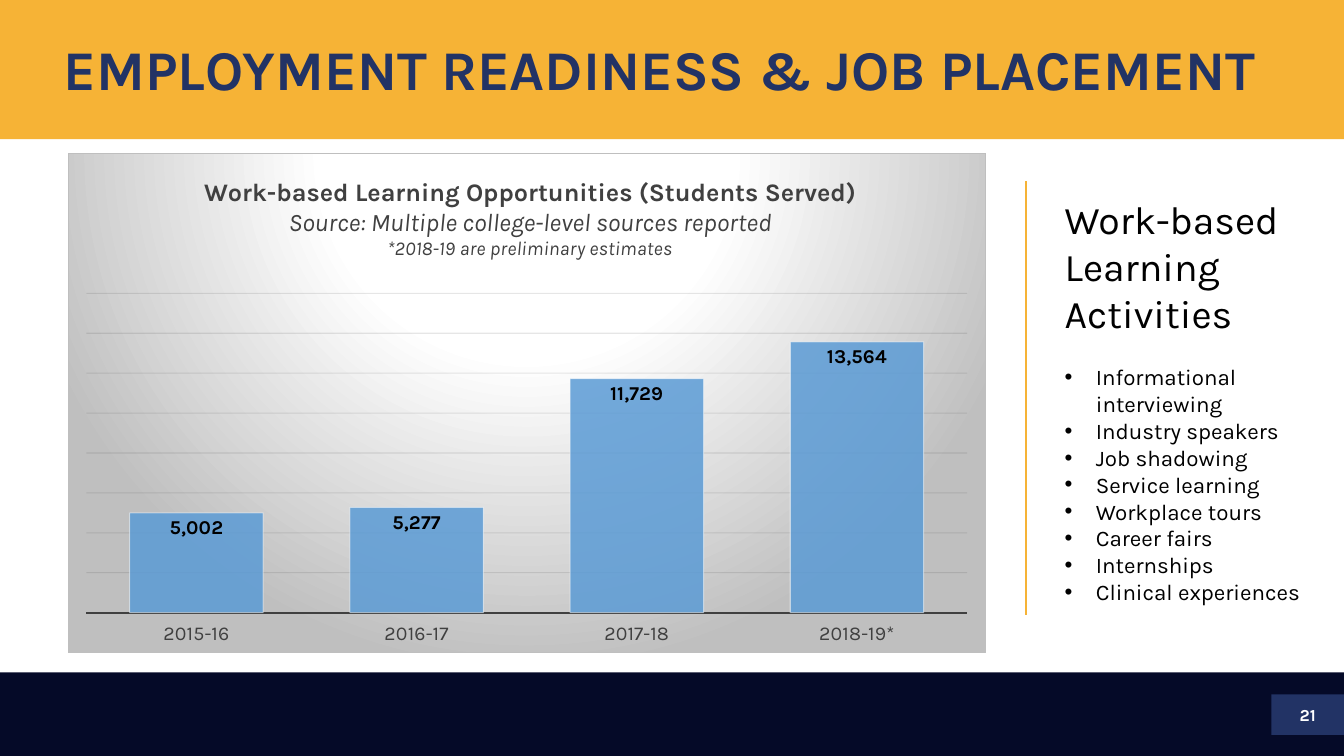
from lxml.etree import SubElement
from pptx import Presentation
from pptx.chart.data import CategoryChartData
from pptx.dml.color import RGBColor
from pptx.enum.chart import XL_CHART_TYPE, XL_LABEL_POSITION, XL_TICK_LABEL_POSITION, XL_TICK_MARK
from pptx.enum.shapes import MSO_CONNECTOR, MSO_SHAPE
from pptx.enum.text import MSO_ANCHOR, MSO_AUTO_SIZE, PP_ALIGN
from pptx.oxml import parse_xml
from pptx.oxml.ns import nsdecls, qn
from pptx.util import Inches, Pt

HUES = {
    "gold": "F6B336", "night": "050A28", "navy": "223365", "white": "FFFFFF",
    "black": "000000", "gray": "404040", "silver": "BFBFBF", "grid": "0D0D0D",
    "bar": "5B9BD5",
}
FONT = "Karla"
TASKS = [
    "Informational interviewing", "Industry speakers", "Job shadowing",
    "Service learning", "Workplace tours", "Career fairs", "Internships",
    "Clinical experiences",
]
YEARS = ["2015-16", "2016-17", "2017-18", "2018-19*"]
COUNTS = [5002, 5277, 11729, 13564]
HEADS = [
    ("Work-based Learning Opportunities (Students Served)", 18, True),
    ("Source: Multiple college-level sources reported", 18, False),
    ("*2018-19 are preliminary estimates", 14, False),
]
BACK = f"""<c:spPr {nsdecls("c", "a")}>
  <a:gradFill rotWithShape="1"><a:gsLst>
    <a:gs pos="0"><a:srgbClr val="{HUES['white']}"/></a:gs>
    <a:gs pos="39000"><a:srgbClr val="{HUES['white']}"/></a:gs>
    <a:gs pos="100000"><a:srgbClr val="{HUES['silver']}"/></a:gs>
  </a:gsLst><a:path path="circle">
    <a:fillToRect l="50000" t="-80000" r="50000" b="180000"/>
  </a:path></a:gradFill>
  <a:ln w="9525"><a:solidFill><a:srgbClr val="{HUES['silver']}"/></a:solidFill></a:ln>
</c:spPr>"""


def color(name):
    return RGBColor.from_string(HUES[name])


def style(font, size, hue, bold=False, italic=False):
    font.name, font.size, font.bold, font.italic = FONT, Pt(size), bold, italic
    font.color.rgb = color(hue)


def write(frame, text, size=16, hue="black", bold=False, italic=False,
          align=PP_ALIGN.LEFT, gap=0, space=1, bullet=None, first=False):
    para = frame.paragraphs[0] if first else frame.add_paragraph()
    para.alignment, para.line_spacing = align, space
    para.space_before, para.space_after = Pt(gap), Pt(0)
    if bullet is not None:
        props = para._p.get_or_add_pPr()
        hang = Inches(0.31) if bullet else 0
        props.set("marL", str(hang))
        props.set("indent", str(-hang))
        if bullet:
            SubElement(props, qn("a:buFont"), typeface="Arial")
            SubElement(props, qn("a:buChar"), char=bullet)
        else:
            SubElement(props, qn("a:buNone"))
    run = para.add_run()
    run.text = text
    style(run.font, size, hue, bold, italic)


def fade(root, name, share):
    for node in root.iter(qn("a:srgbClr")):
        if node.get("val") == HUES[name]:
            SubElement(node, qn("a:alpha"), val=str(share * 1000))


def layout(x, y, w=None, h=None):
    rows = "".join(f'<c:{key}Mode val="edge"/>' for key in "xy")
    rows += "".join(f'<c:{key} val="{val}"/>'
                    for key, val in zip("xywh", (x, y, w, h)) if val is not None)
    inner = '<c:layoutTarget val="inner"/>' if w else ""
    return parse_xml(f'<c:layout {nsdecls("c")}><c:manualLayout>{inner}{rows}'
                     "</c:manualLayout></c:layout>")


def place(root, spot, after=None):
    for old in root.findall(qn("c:layout")):
        root.remove(old)
    if after is None:
        root.insert(0, spot)
    else:
        root.find(qn(after)).addnext(spot)


class Deck:
    """Holds the style and the current slide."""

    def __init__(self):
        self.file = Presentation()
        self.file.slide_width, self.file.slide_height = Inches(13.33), Inches(7.5)
        self.slide = self.file.slides.add_slide(self.file.slide_layouts[1])
        self.shapes = self.slide.shapes

    def band(self, x, y, w, h, hue):
        box = self.shapes.add_shape(MSO_SHAPE.RECTANGLE, *map(Inches, (x, y, w, h)))
        box.shadow.inherit = False
        box.fill.solid()
        box.fill.fore_color.rgb = color(hue)
        box.line.fill.background()

    def holder(self, index, x, y, w, h):
        box = self.slide.placeholders[index]
        box.left, box.top, box.width, box.height = map(Inches, (x, y, w, h))
        box.element.getparent().append(box.element)
        box.text_frame.word_wrap = True
        box.text_frame.vertical_anchor = MSO_ANCHOR.TOP
        box.text_frame.auto_size = MSO_AUTO_SIZE.NONE
        return box.text_frame

    def title(self, text):
        frame = self.holder(0, 0.53, 0.32, 12.29, 1.45)
        frame.margin_top = Inches(0.1)
        write(frame, text, size=40, hue="navy", bold=True, space=0.9, first=True)

    def number(self, text):
        box = self.shapes.add_textbox(*map(Inches, (12.61, 6.89, 0.72, 0.4)))
        frame = box.text_frame
        frame.word_wrap, frame.vertical_anchor = True, MSO_ANCHOR.MIDDLE
        write(frame, text, size=12, hue="white", bold=True,
              align=PP_ALIGN.CENTER, first=True)

    def rule(self, x, top, end):
        line = self.shapes.add_connector(
            MSO_CONNECTOR.STRAIGHT, *map(Inches, (x, top, x, end)))
        line.line.color.rgb, line.line.width = color("gold"), Pt(1.5)
        SubElement(line.element.spPr, qn("a:effectLst"))

    def list(self, head, items):
        frame = self.holder(1, 10.46, 1.89, 2.6, 4.21)
        write(frame, head, size=28, bullet="", first=True)
        for item in items:
            write(frame, item, bullet="•", gap=19 if item == items[0] else 0)

    def chart(self):
        data = CategoryChartData(number_format="#,##0")
        data.categories = YEARS
        data.add_series("Series 1", COUNTS)
        chart = self.shapes.add_chart(
            XL_CHART_TYPE.COLUMN_CLUSTERED,
            *map(Inches, (0.67, 1.52, 9.11, 4.96)), data).chart
        style(chart.font, 14, "gray")
        chart.has_legend = False
        frame = chart.chart_title.text_frame
        for text, size, bold in HEADS:
            write(frame, text, size=size, hue="gray", bold=bold, italic=not bold,
                  align=PP_ALIGN.CENTER, first=bold)
        chart.chart_title.include_in_layout = False
        self.axes(chart)
        self.bars(chart.plots[0])
        root = chart.element
        for name, share in (("grid", 10), ("bar", 85), ("white", 50)):
            fade(root, name, share)
        body = root.find(qn("c:chart"))
        place(body.find(qn("c:title")), layout(0.145, 0.04), "c:tx")
        place(body.find(qn("c:plotArea")), layout(0.02, 0.28, 0.96, 0.64))
        body.addnext(parse_xml(BACK))

    def axes(self, chart):
        years, scale = chart.category_axis, chart.value_axis
        style(years.tick_labels.font, 14, "gray")
        years.major_tick_mark = years.minor_tick_mark = XL_TICK_MARK.NONE
        years.tick_label_position = XL_TICK_LABEL_POSITION.LOW
        years.format.line.color.rgb = color("gray")
        years.format.line.width = Pt(1.5)
        scale.minimum_scale, scale.maximum_scale, scale.major_unit = 0, 16000, 2000
        scale.has_major_gridlines, scale.visible = True, False
        grid = scale.major_gridlines.format.line
        grid.color.rgb, grid.width = color("grid"), Pt(0.75)

    def bars(self, plot):
        plot.gap_width, plot.vary_by_categories = 65, False
        form = plot.series[0].format
        form.fill.solid()
        form.fill.fore_color.rgb = color("bar")
        form.line.color.rgb, form.line.width = color("white"), Pt(0.75)
        tags = plot.series[0].data_labels
        tags.show_value, tags.position = True, XL_LABEL_POSITION.INSIDE_END
        tags.number_format, tags.number_format_is_linked = "#,##0", False
        style(tags.font, 14, "black", bold=True)


def main():
    deck = Deck()
    deck.band(-0.01, 0, 13.34, 1.38, "gold")
    deck.band(-0.01, 6.67, 13.34, 0.84, "night")
    deck.band(12.61, 6.89, 0.74, 0.4, "navy")
    deck.title("EMPLOYMENT READINESS & JOB PLACEMENT")
    deck.number("21")
    deck.rule(10.18, 1.8, 6.1)
    deck.list("Work-based Learning Activities", TASKS)
    deck.chart()
    deck.file.save("out.pptx")


if __name__ == "__main__":
    main()
